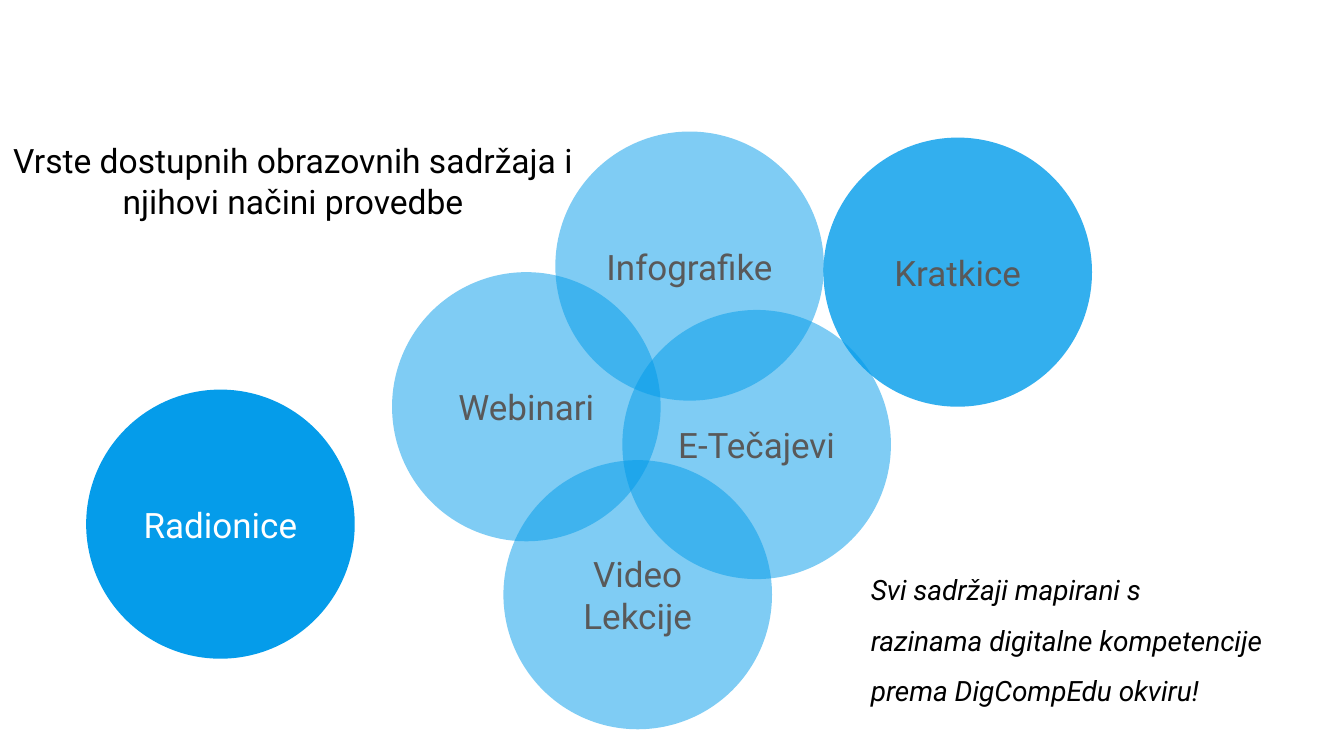
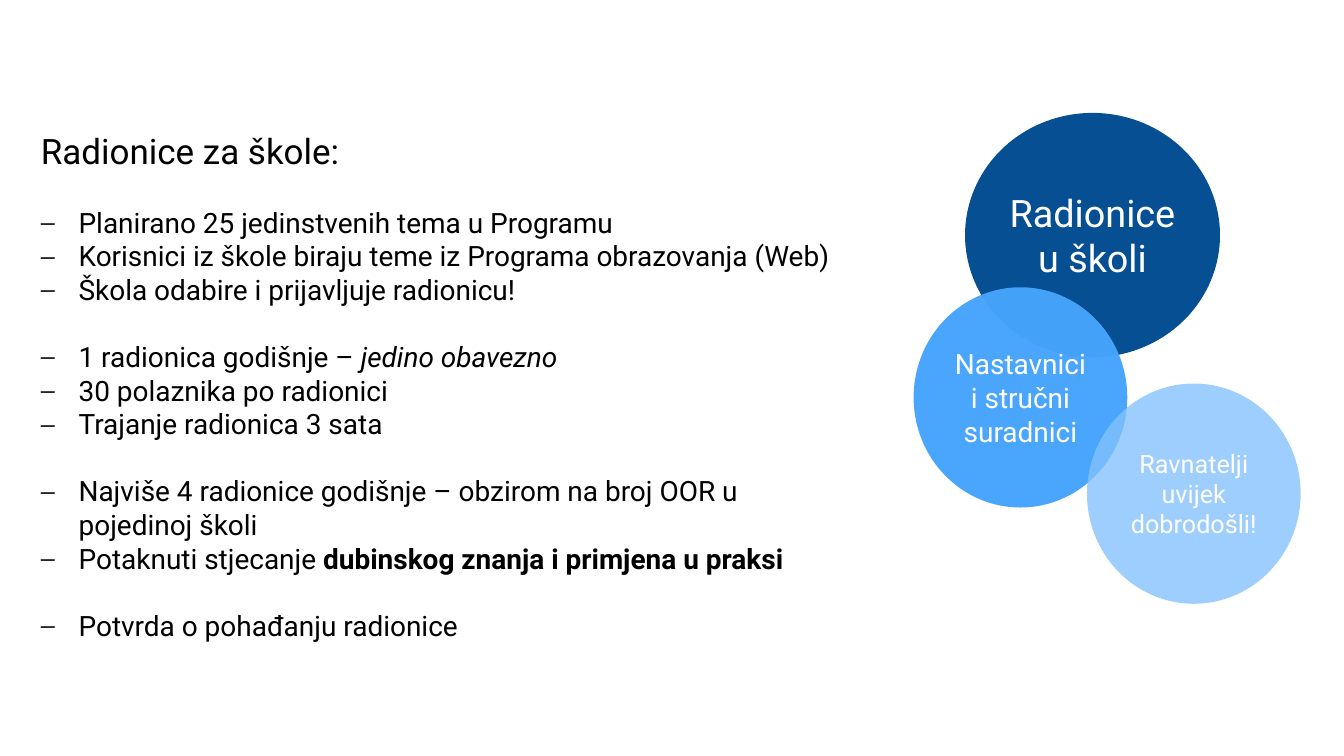
from dataclasses import dataclass

from lxml import etree
from pptx import Presentation
from pptx.dml.color import RGBColor
from pptx.enum import shapes, text
from pptx.oxml import ns
from pptx.util import Inches, Pt

FONT = "Roboto"
BLACK = RGBColor(0x00, 0x00, 0x00)
WHITE = RGBColor(0xFF, 0xFF, 0xFF)
GREY = RGBColor(0x59, 0x59, 0x59)
CYAN = RGBColor(0x00, 0x9B, 0xEA)
NAVY = RGBColor(0x02, 0x4C, 0x90)
BLUE = RGBColor(0x45, 0xA4, 0xFC)
LIGHT_BLUE = RGBColor(0x83, 0xC2, 0xFD)

TITLE_ONLY = 5
BODY_SIZE = 40
BODY_INSET = 0.08
GROUP_GAP = 48
LIST_INDENT = 0.75


@dataclass
class Box:
    left: float
    top: float
    width: float
    height: float

    def lengths(self) -> tuple:
        return tuple(Inches(v) for v in (self.left, self.top, self.width, self.height))


@dataclass
class Circle:
    label: str
    left: float
    top: float
    opacity: int = 50
    fill: RGBColor = CYAN
    color: RGBColor = GREY
    size: int = 50
    width: float = 5.33
    height: float = 5.34


CONTENT_CIRCLES = [
    Circle("Radionice", 1.71, 7.73, 98, color=WHITE),
    Circle("E-Tečajevi", 12.35, 6.15),
    Circle("Webinari", 7.78, 5.4),
    Circle("Infografike", 11.02, 2.61),
    Circle("Kratkice", 16.34, 2.73, 80),
    Circle("Video Lekcije", 9.99, 9.13),
]

WORKSHOP_CIRCLES = [
    Circle("Radionice u školi", 19.15, 2.24, 98, NAVY, WHITE, 54, 5.06, 4.85),
    Circle("Nastavnici i stručni suradnici", 18.13, 5.7, 97, BLUE, WHITE, 40, 4.24, 4.37),
    Circle("Ravnatelji uvijek dobrodošli!", 21.57, 7.61, 79, LIGHT_BLUE, WHITE, 36, 4.24, 4.37),
]

# Each item is (plain text, italic text, bold text).
WORKSHOP_GROUPS = [
    [
        ("Planirano 25 jedinstvenih tema u Programu", "", ""),
        ("Korisnici iz škole biraju teme iz Programa obrazovanja (Web)", "", ""),
        ("Škola odabire i prijavljuje radionicu!", "", ""),
    ],
    [
        ("1 radionica godišnje – ", "jedino obavezno", ""),
        ("30 polaznika po radionici", "", ""),
        ("Trajanje radionica 3 sata", "", ""),
    ],
    [
        ("Najviše 4 radionice godišnje – obzirom na broj OOR u pojedinoj školi", "", ""),
        ("Potaknuti stjecanje ", "", "dubinskog znanja i primjena u praksi"),
    ],
    [("Potvrda o pohađanju radionice", "", "")],
]


def style_font(font, size: int, color: RGBColor = BLACK) -> None:
    font.name = FONT
    font.size = Pt(size)
    font.color.rgb = color


def set_insets(frame, inset: float) -> None:
    frame.margin_left = frame.margin_right = Inches(inset)
    frame.margin_top = frame.margin_bottom = Inches(inset)


def add_titled_slide(presentation, title: str, box: Box, size: int, align):
    slide = presentation.slides.add_slide(presentation.slide_layouts[TITLE_ONLY])
    shape = slide.shapes.title
    shape.left, shape.top, shape.width, shape.height = box.lengths()
    frame = shape.text_frame
    frame.text = title
    frame.word_wrap = True
    frame.auto_size = text.MSO_AUTO_SIZE.NONE
    frame.vertical_anchor = text.MSO_ANCHOR.TOP
    set_insets(frame, BODY_INSET)
    paragraph = frame.paragraphs[0]
    paragraph.alignment = align
    style_font(paragraph.runs[0].font, size)
    return slide


def add_circle(slide, circle: Circle) -> None:
    box = Box(circle.left, circle.top, circle.width, circle.height)
    shape = slide.shapes.add_shape(shapes.MSO_SHAPE.OVAL, *box.lengths())
    shape.shadow.inherit = False
    shape.line.fill.background()
    shape.fill.solid()
    shape.fill.fore_color.rgb = circle.fill
    color = shape.fill._xPr.find(ns.qn("a:solidFill"))[0]
    etree.SubElement(color, ns.qn("a:alpha"), val=str(circle.opacity * 1000))

    frame = shape.text_frame
    frame.text = circle.label
    frame.word_wrap = True
    frame.vertical_anchor = text.MSO_ANCHOR.MIDDLE
    paragraph = frame.paragraphs[0]
    paragraph.alignment = text.PP_ALIGN.CENTER
    style_font(paragraph.runs[0].font, circle.size, circle.color)


def add_body_frame(slide, box: Box):
    frame = slide.shapes.add_textbox(*box.lengths()).text_frame
    frame.word_wrap = True
    set_insets(frame, BODY_INSET)
    return frame


def add_dash_bullet(paragraph) -> None:
    properties = paragraph._p.get_or_add_pPr()
    properties.set("marL", str(Inches(LIST_INDENT)))
    properties.set("indent", str(-Inches(LIST_INDENT)))
    etree.SubElement(properties, ns.qn("a:buFont"), typeface=FONT)
    etree.SubElement(properties, ns.qn("a:buChar"), char="⎯")


def add_grouped_list(slide, box: Box, groups: list) -> None:
    frame = add_body_frame(slide, box)
    for group_index, group in enumerate(groups):
        for item_index, (plain, italic, bold) in enumerate(group):
            is_first = group_index == item_index == 0
            paragraph = frame.paragraphs[0] if is_first else frame.add_paragraph()
            add_dash_bullet(paragraph)
            if item_index == 0 and not is_first:
                paragraph.space_before = Pt(GROUP_GAP)
            for words, is_italic, is_bold in (
                (plain, None, None), (italic, True, None), (bold, None, True)
            ):
                if words:
                    run = paragraph.add_run()
                    run.text = words
                    style_font(run.font, BODY_SIZE)
                    run.font.italic = is_italic
                    run.font.bold = is_bold


def add_content_types_slide(presentation) -> None:
    slide = add_titled_slide(
        presentation,
        "Vrste dostupnih obrazovnih sadržaja i njihovi načini provedbe",
        Box(-0.85, 2.7, 13.33, 1.78), 48, text.PP_ALIGN.CENTER,
    )
    for circle in CONTENT_CIRCLES:
        add_circle(slide, circle)
    frame = add_body_frame(slide, Box(17.2, 10.95, 8.3, 4.03))
    paragraph = frame.paragraphs[0]
    paragraph.text = "Svi sadržaji mapirani s\vrazinama digitalne kompetencije\vprema DigCompEdu okviru!"
    paragraph.line_spacing = 1.5
    for run in paragraph.runs:
        style_font(run.font, BODY_SIZE)
        run.font.italic = True


def add_workshops_slide(presentation) -> None:
    slide = add_titled_slide(
        presentation, "Radionice za škole:",
        Box(0.73, 2.49, 16.08, 1.2), 50, text.PP_ALIGN.LEFT,
    )
    add_grouped_list(slide, Box(0.73, 3.99, 16.08, 8.83), WORKSHOP_GROUPS)
    for circle in WORKSHOP_CIRCLES:
        add_circle(slide, circle)


def main() -> None:
    presentation = Presentation()
    presentation.slide_width = Inches(26.67)
    presentation.slide_height = Inches(15)
    add_content_types_slide(presentation)
    add_workshops_slide(presentation)
    presentation.save("out.pptx")


if __name__ == "__main__":
    main()
